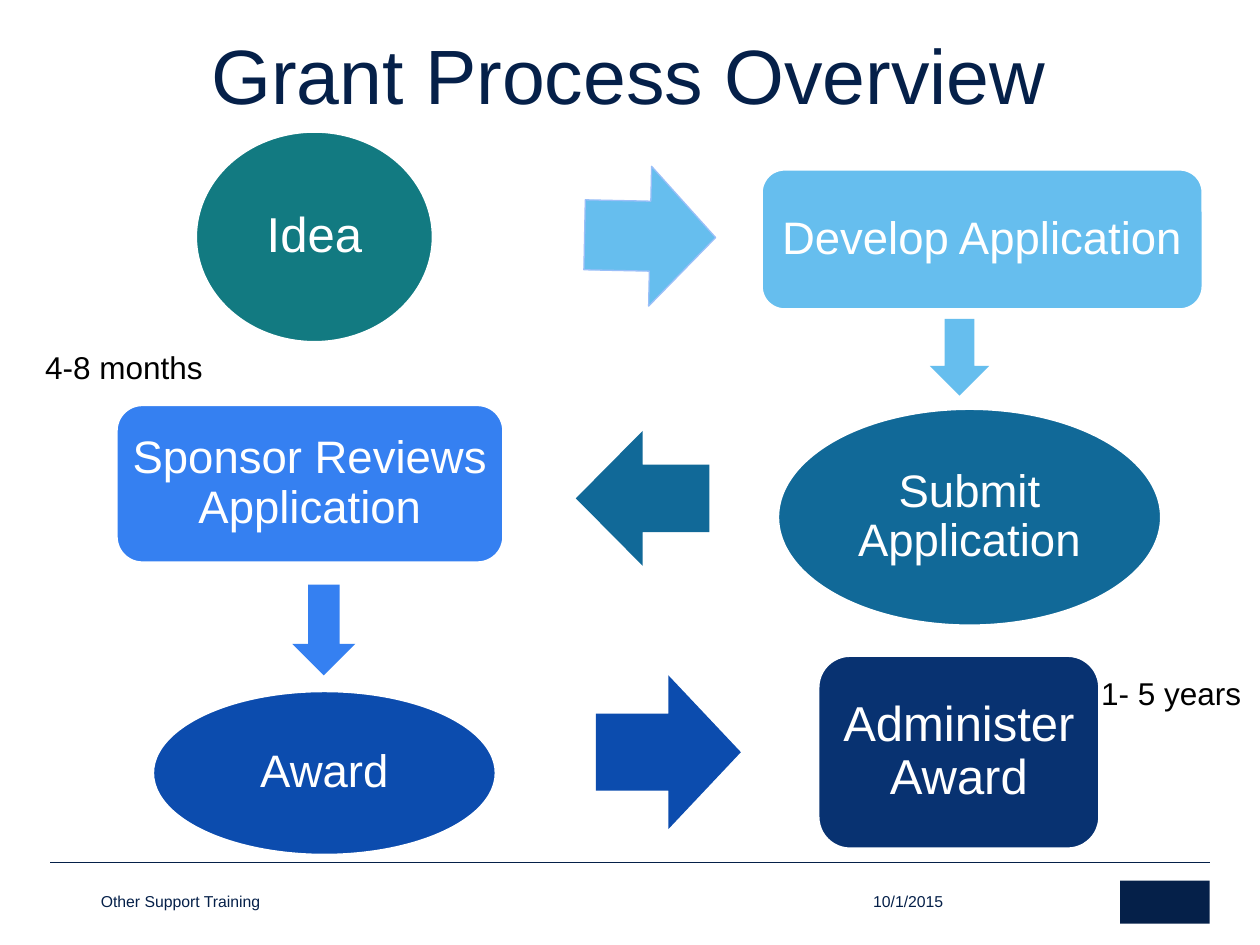
from pptx import Presentation
from pptx.dml.color import RGBColor
from pptx.enum.shapes import MSO_CONNECTOR as Connector, MSO_SHAPE as Shape
from pptx.enum.text import MSO_ANCHOR as Anchor, MSO_AUTO_SIZE as AutoSize, PP_ALIGN as Align
from pptx.oxml.ns import qn
from pptx.util import Inches, Pt
from lxml.etree import SubElement

COLUMNS, ROWS = 100, 75
WIDTH, HEIGHT = Inches(10), Inches(7.5)
COLORS = {
    "navy": "052049", "white": "FFFFFF", "black": "000000", "teal": "127A81",
    "sky": "66BEEE", "pale": "9ABFF8", "ocean": "116998", "bright": "3580F1",
    "royal": "0C4CAE", "deep": "083271",
}
STEPS = [
    ("Idea", Shape.OVAL, (15.5, 10.4, 18.9, 16.8), "teal", 28),
    ("Develop Application", Shape.ROUNDED_RECTANGLE, (60.4, 13.4, 35.1, 11.2), "sky", 26),
    ("Submit Application", Shape.OVAL, (61.7, 32.4, 30.5, 17.3), "ocean", 26),
    ("Sponsor Reviews Application", Shape.ROUNDED_RECTANGLE, (9.2, 32.1, 30.8, 12.6), "bright", 26),
    ("Award", Shape.OVAL, (12.1, 54.8, 27.3, 13.1), "royal", 26),
    ("Administer Award", Shape.ROUNDED_RECTANGLE, (64.9, 52, 22.4, 15.4), "deep", 28),
]
ARROWS = [
    ((46.4, 13.2, 10.4, 11.1), 1.2, "sky", "pale"),
    ((73.1, 26, 6.1, 4.7), 90, "sky", None),
    ((45.7, 34.2, 10.6, 10.7), 180, "ocean", None),
    ((22.1, 47.5, 7.2, 5), 90, "bright", None),
    ((47.3, 53.6, 11.5, 12.2), 0, "royal", None),
]
LABELS = [
    ("Grant Process Overview", (15.8, 1.7, 70.6, 8.4), 44, "navy"),
    ("4-8 months", (2.6, 27.1, 14.6, 4), 18, "black"),
    ("1- 5 years", (86.4, 53, 13.2, 4), 18, "black"),
]
FOOTERS = [
    ("10/1/2015", (69.3, 70.6, 10.1, 1.7)),
    ("Other Support Training", (8, 70.8, 47.1, 1.5)),
]


def place(column, row, columns, rows):
    """Turn a grid cell range into left, top, width and height."""
    across, down = WIDTH / COLUMNS, HEIGHT / ROWS
    return int(column * across), int(row * down), int(columns * across), int(rows * down)


def color(name):
    """Look up a named color."""
    return RGBColor.from_string(COLORS[name])


def apply_format(target, **values):
    """Set each given format value on the target."""
    for name, value in values.items():
        setattr(target, name, value)


def write(shape, text, size, ink, margins=None, paragraph_format=None, **frame_format):
    """Write one formatted paragraph into a shape."""
    frame = shape.text_frame
    apply_format(frame, **frame_format)
    if margins is not None:
        sides = ("left", "top", "right", "bottom")
        apply_format(frame, **{f"margin_{side}": Inches(margins) for side in sides})
    paragraph = frame.paragraphs[0]
    apply_format(paragraph, **(paragraph_format or {"alignment": Align.LEFT}))
    run = paragraph.add_run()
    run.text = text
    apply_format(run.font, name="Arial", size=Pt(size))
    run.font.color.rgb = color(ink)


def add_block(slide, kind, cells, fill, outline=None, weight=0.75):
    """Add a flat filled preset shape."""
    shape = slide.shapes.add_shape(kind, *place(*cells))
    shape.shadow.inherit = False
    shape.fill.solid()
    shape.fill.fore_color.rgb = color(fill)
    if outline:
        shape.line.color.rgb = color(outline)
        shape.line.width = Pt(weight)
    else:
        shape.line.fill.background()
    return shape


def add_step(slide, text, kind, cells, fill, size):
    """Add a process step with centered text."""
    shape = add_block(slide, kind, cells, fill, "white", 2)
    centered = {"alignment": Align.CENTER, "line_spacing": 0.9}
    write(shape, text, size, "white", 0.04, centered,
          word_wrap=True, vertical_anchor=Anchor.MIDDLE)


def add_arrow(slide, cells, rotation, fill, outline):
    """Add a block arrow between two steps."""
    add_block(slide, Shape.RIGHT_ARROW, cells, fill, outline).rotation = rotation


def add_label(slide, text, cells, size, ink):
    """Add a text box that fits its single line."""
    box = slide.shapes.add_textbox(*place(*cells))
    write(box, text, size, ink, word_wrap=False, auto_size=AutoSize.SHAPE_TO_FIT_TEXT)


def add_footer(slide, text, cells):
    """Add a small footer text resting on its bottom edge."""
    box = slide.shapes.add_textbox(*place(*cells))
    write(box, text, 9, "navy", 0, word_wrap=True, vertical_anchor=Anchor.BOTTOM)


def add_rule(slide, start, end, row):
    """Add the thin horizontal rule above the footer."""
    left, top, width, _ = place(start, row, end - start, 0)
    rule = slide.shapes.add_connector(Connector.STRAIGHT, left, top, left + width, top)
    rule.line.color.rgb = color("navy")
    rule.line.width = Pt(0.25)
    SubElement(rule._element.spPr, qn("a:effectLst"))


def main():
    """Build the grant process slide."""
    presentation = Presentation()
    apply_format(presentation, slide_width=WIDTH, slide_height=HEIGHT)
    slide = presentation.slides.add_slide(presentation.slide_layouts[6])
    add_rule(slide, 4, 96, 68.4)
    add_block(slide, Shape.RECTANGLE, (88.9, 69.9, 7.1, 3.4), "navy")
    for step in STEPS:
        add_step(slide, *step)
    for arrow in ARROWS:
        add_arrow(slide, *arrow)
    for label in LABELS:
        add_label(slide, *label)
    for footer in FOOTERS:
        add_footer(slide, *footer)
    presentation.save("out.pptx")


if __name__ == "__main__":
    main()
